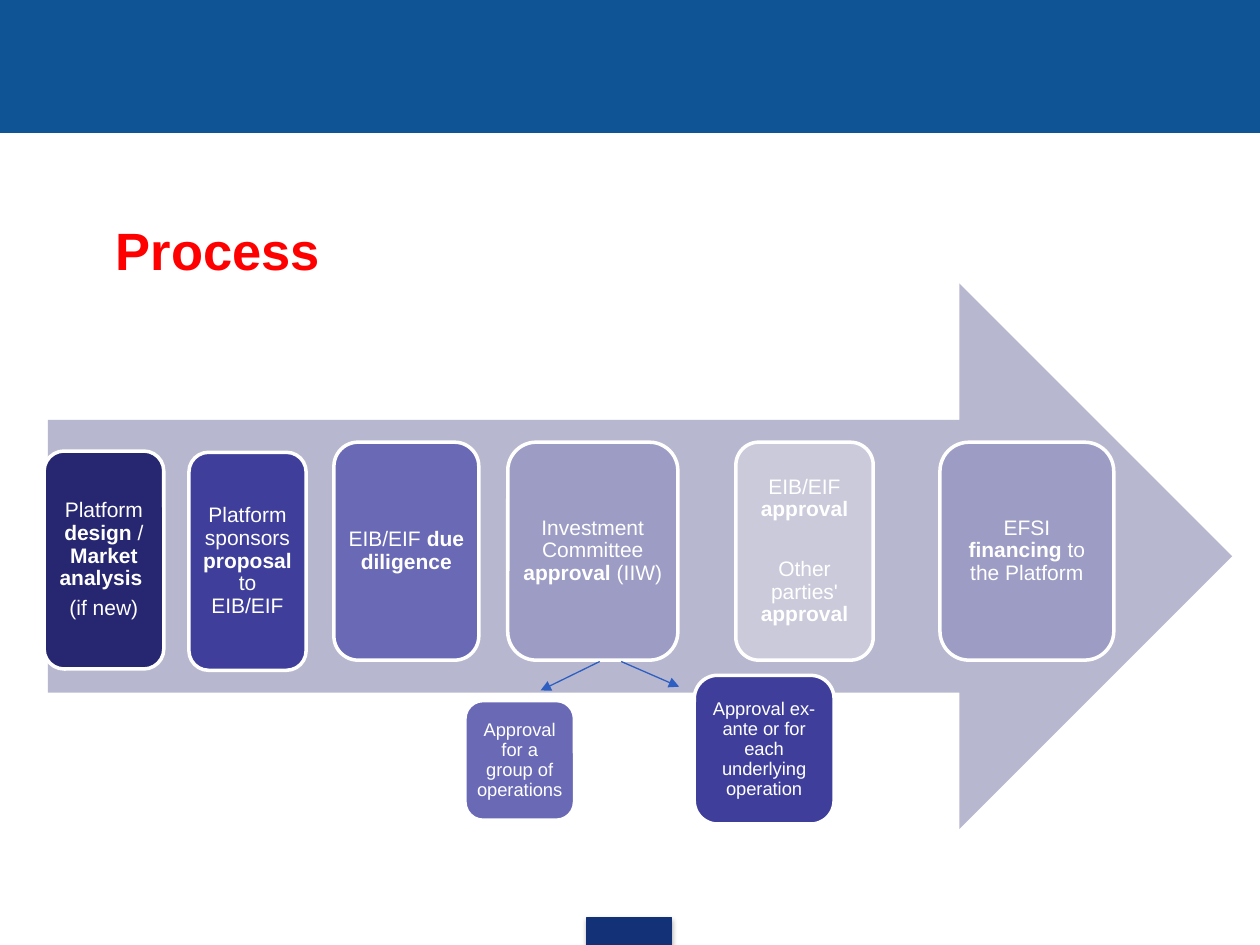
"""Build the Process slide: six stages on an arrow, with two approval routes."""
from dataclasses import dataclass

from lxml.etree import SubElement
from pptx import Presentation
from pptx.dml.color import RGBColor
from pptx.enum.shapes import MSO_CONNECTOR, MSO_SHAPE
from pptx.enum.text import MSO_ANCHOR, PP_ALIGN
from pptx.oxml.ns import qn
from pptx.shapes.autoshape import Shape
from pptx.slide import Slide
from pptx.util import Inches, Pt

NAVY, INDIGO, VIOLET, LILAC, MIST = "262671", "3F3F9B", "6969B5", "9C9CC5", "CACADA"
WHITE, HEADER_BLUE, FOOTER_BLUE, LINK_BLUE = "FFFFFF", "0F5494", "133176", "2D5EC1"


@dataclass(frozen=True)
class Card:
    """A rounded box whose text marks bold parts with asterisks."""
    left: float
    top: float
    width: float
    height: float
    fill: str
    paragraphs: tuple[str, ...]
    size: float = 12
    gap: float = 4.2


@dataclass(frozen=True)
class Link:
    """An arrow between two points."""
    start: tuple[float, float]
    end: tuple[float, float]


STAGES = (
    Card(0.35, 3.58, 0.95, 1.73, NAVY, ("Platform *design* / *Market analysis *", "(if new)")),
    Card(1.5, 3.59, 0.93, 1.73, INDIGO, ("Platform sponsors *proposal* to EIB/EIF",)),
    Card(2.65, 3.51, 1.15, 1.73, VIOLET, ("EIB/EIF *due diligence*",)),
    Card(4.03, 3.51, 1.35, 1.73, LILAC, ("Investment Committee *approval* (IIW)",)),
    Card(5.84, 3.51, 1.09, 1.73, MIST,
         ("EIB/EIF *approval*", "Other parties' *approval*"), gap=21.3),
    Card(7.46, 3.51, 1.38, 1.73, LILAC, ("EFSI *financing* to the Platform",)),
)
ROUTES = (
    Card(3.69, 5.56, 0.87, 0.95, VIOLET, ("Approval for a group of operations",), size=10.5),
    Card(5.51, 5.36, 1.11, 1.18, INDIGO,
         ("Approval ex-ante or for each underlying operation",), size=10.5),
)
LINKS = (Link((4.76, 5.25), (4.29, 5.48)), Link((4.93, 5.25), (5.39, 5.45)))


def rgb(value: str) -> RGBColor:
    """Turn a hex string into a colour."""
    return RGBColor.from_string(value)


def write(holder: Shape, paragraphs: tuple[str, ...], *, size: float, color: str = WHITE,
          align: PP_ALIGN = PP_ALIGN.CENTER, inset: float = 0.05, left_inset: float = 0.05,
          spacing: float = 0.9, gap: float = 0) -> None:
    """Write paragraphs into a shape, setting parts between asterisks in bold."""
    frame = holder.text_frame
    frame.word_wrap = True
    frame.vertical_anchor = MSO_ANCHOR.MIDDLE
    frame.margin_left = Inches(left_inset)
    frame.margin_right = frame.margin_top = frame.margin_bottom = Inches(inset)
    for index, content in enumerate(paragraphs):
        paragraph = frame.add_paragraph() if index else frame.paragraphs[0]
        paragraph.alignment = align
        paragraph.line_spacing = spacing
        is_last = index == len(paragraphs) - 1
        paragraph.space_after = Pt(min(gap, 4.2) if is_last else gap)
        for part, words in enumerate(content.split("*")):
            if words:
                run = paragraph.add_run()
                run.text = words
                run.font.name = "Arial"
                run.font.size = Pt(size)
                run.font.bold = part % 2 == 1
                run.font.color.rgb = rgb(color)


def add_block(slide: Slide, kind: MSO_SHAPE, left: float, top: float, width: float,
              height: float, fill: str, line: str | None = None,
              line_width: float = 0.75) -> Shape:
    """Add a filled shape without a shadow."""
    block = slide.shapes.add_shape(kind, Inches(left), Inches(top),
                                   Inches(width), Inches(height))
    block.fill.solid()
    block.fill.fore_color.rgb = rgb(fill)
    if line:
        block.line.color.rgb = rgb(line)
        block.line.width = Pt(line_width)
    else:
        block.line.fill.background()
    block.shadow.inherit = False
    return block


def add_soft_shadow(block: Shape) -> None:
    """Cast a faint shadow downwards."""
    effects = block._element.spPr.find(qn("a:effectLst"))
    shadow = SubElement(effects, qn("a:outerShdw"), blurRad=str(Pt(3.1)),
                        dist=str(Pt(1.8)), dir="5400000", rotWithShape="0")
    black = SubElement(shadow, qn("a:srgbClr"), val="000000")
    SubElement(black, qn("a:alpha"), val="35000")


def add_card(slide: Slide, card: Card) -> None:
    """Draw a white-edged card with its text."""
    block = add_block(slide, MSO_SHAPE.ROUNDED_RECTANGLE, card.left, card.top,
                      card.width, card.height, card.fill, WHITE, 2)
    write(block, card.paragraphs, size=card.size, gap=card.gap)


def add_link(slide: Slide, link: Link) -> None:
    """Draw a thin arrow with a triangular head."""
    ends = [Inches(value) for value in (*link.start, *link.end)]
    arrow = slide.shapes.add_connector(MSO_CONNECTOR.STRAIGHT, *ends)
    arrow.line.color.rgb = rgb(LINK_BLUE)
    arrow.line.width = Pt(0.75)
    SubElement(arrow.line._get_or_add_ln(), qn("a:tailEnd"), type="triangle")
    SubElement(arrow._element.spPr, qn("a:effectLst"))


def main() -> None:
    """Build and save the slide."""
    deck = Presentation()
    deck.slide_width, deck.slide_height = Inches(10), Inches(7.5)
    slide = deck.slides.add_slide(deck.slide_layouts[6])

    add_block(slide, MSO_SHAPE.RECTANGLE, 0, 0, 10, 1.05, HEADER_BLUE, HEADER_BLUE)
    footer = add_block(slide, MSO_SHAPE.RECTANGLE, 4.66, 7.28, 0.67, 0.22,
                       FOOTER_BLUE, FOOTER_BLUE)
    add_soft_shadow(footer)

    heading = slide.shapes.add_textbox(Inches(0.43), Inches(1.47), Inches(9), Inches(1.02))
    write(heading, ("*Process*",), size=30, color="FF0000", align=PP_ALIGN.LEFT,
          left_inset=0.49, spacing=1)

    add_block(slide, MSO_SHAPE.RIGHT_ARROW, 0.38, 2.25, 9.4, 4.33, "B7B7CF")
    for card in STAGES + ROUTES:
        add_card(slide, card)
    for link in LINKS:
        add_link(slide, link)

    deck.save("out.pptx")


if __name__ == "__main__":
    main()
